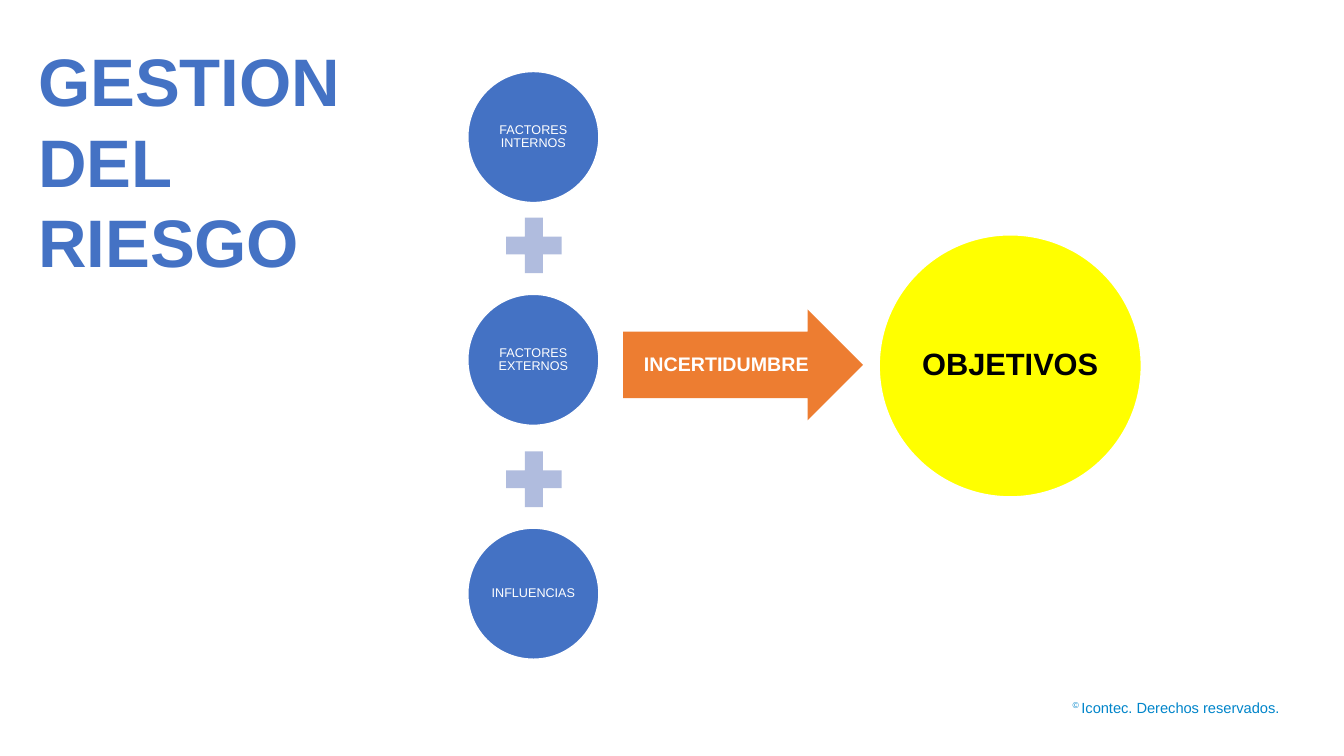
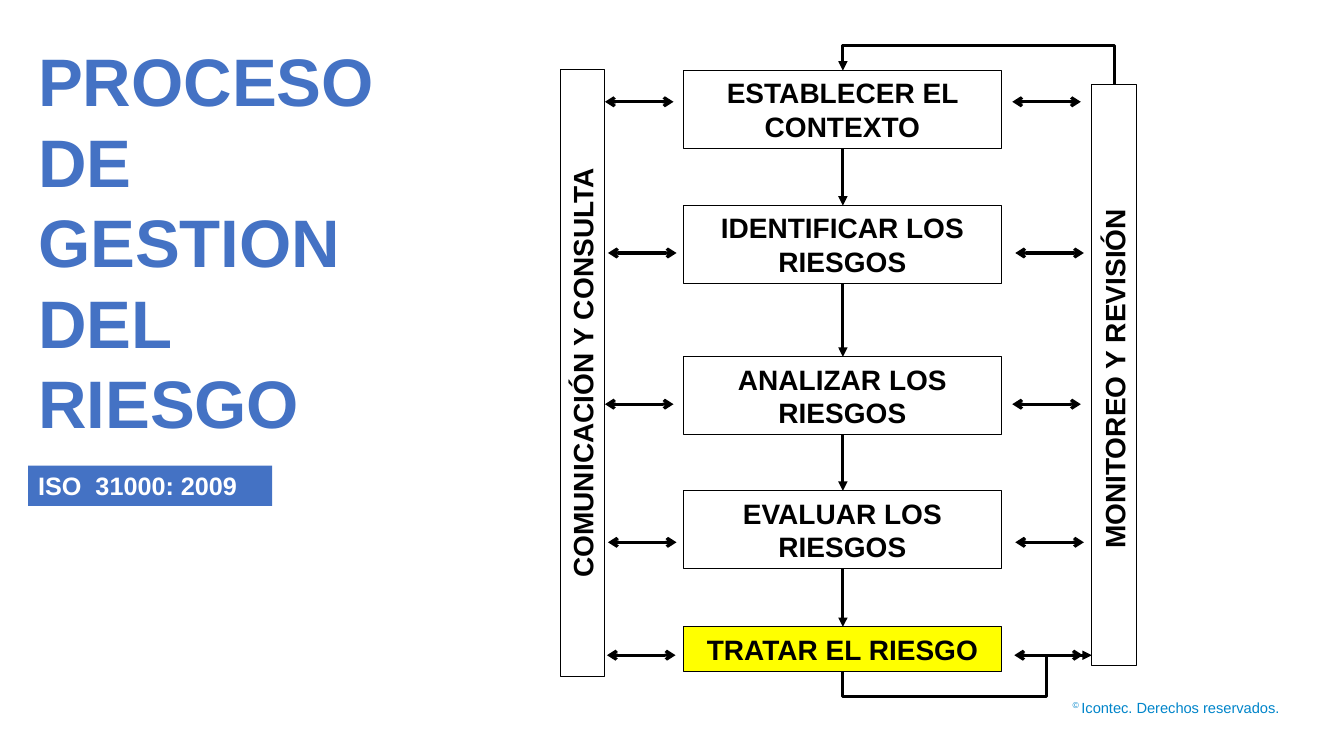
from lxml.etree import SubElement
from pptx import Presentation
from pptx.dml.color import RGBColor
from pptx.enum.shapes import MSO_CONNECTOR, MSO_SHAPE
from pptx.enum.text import MSO_ANCHOR as Anchor, PP_ALIGN as Align
from pptx.oxml.ns import qn
from pptx.util import Pt

PX = 9144  # one px is a hundredth of an inch
FONT = "Arial"
BLUE = RGBColor(0x44, 0x72, 0xC4)
PALE_BLUE = RGBColor(0xB0, 0xBC, 0xDE)
FOOTER_BLUE = RGBColor(0x00, 0x85, 0xCA)
ORANGE = RGBColor(0xED, 0x7D, 0x31)
YELLOW = RGBColor(0xFF, 0xFF, 0x00)
WHITE = RGBColor(0xFF, 0xFF, 0xFF)
BLACK = RGBColor(0x00, 0x00, 0x00)


def add_box(slide, kind, bounds, runs=(), size=20, color=BLACK, bold=True,
            align=Align.CENTER, anchor=Anchor.MIDDLE, margins=(10, 5),
            fill=None, line=None, line_width=0.75, spacing=None):
    """Add a preset shape, or a text box when kind is None, with its runs."""
    bounds = [value * PX for value in bounds]
    if kind is None:
        shape = slide.shapes.add_textbox(*bounds)
    else:
        shape = slide.shapes.add_shape(kind, *bounds)
        shape.shadow.inherit = False
        if fill is None:
            shape.fill.background()
        else:
            shape.fill.solid()
            shape.fill.fore_color.rgb = fill
        if line is None:
            shape.line.fill.background()
        else:
            shape.line.color.rgb = line
            shape.line.width = Pt(line_width)
    frame = shape.text_frame
    frame.word_wrap = True
    frame.vertical_anchor = anchor
    frame.margin_left = frame.margin_right = margins[0] * PX
    frame.margin_top = frame.margin_bottom = margins[1] * PX
    paragraph = frame.paragraphs[0]
    paragraph.alignment = align
    if spacing:
        paragraph.line_spacing = spacing
    for text in runs:
        run = paragraph.add_run()
        run.text = text
        run.font.name = FONT
        run.font.size = Pt(size)
        run.font.bold = bold
        run.font.color.rgb = color
    return shape


def style_arrow(shape, **ends):
    """Draw a thick black line; ends maps headEnd or tailEnd to a type."""
    shape.line.color.rgb = BLACK
    shape.line.width = Pt(2.25)
    properties = shape._element.spPr
    outline = properties.find(qn("a:ln"))
    for end, kind in ends.items():
        SubElement(outline, qn(f"a:{end}"), type=kind)
    SubElement(properties, qn("a:effectLst"))


presentation = Presentation()
presentation.slide_width = 1333 * PX
presentation.slide_height = 750 * PX
blank_layout = presentation.slide_layouts[6]

slides = []
for title, title_height in (("GESTION DEL RIESGO", 252),
                            ("PROCESO DE GESTION DEL RIESGO", 414)):
    slide = presentation.slides.add_slide(blank_layout)
    footer = add_box(slide, None, (1047, 688, 232, 29),
                     ("© ", "Icontec. Derechos reservados."), 10.5, FOOTER_BLUE,
                     bold=False, align=Align.RIGHT, anchor=Anchor.TOP)
    copyright_sign = footer.text_frame.paragraphs[0].runs[0]
    copyright_sign.font._element.set("baseline", "30000")
    add_box(slide, None, (28, 34, 420, title_height), (title,), 48, BLUE,
            align=Align.LEFT, anchor=Anchor.TOP)
    slides.append(slide)
factors_slide, process_slide = slides

# Factors that add up to uncertainty about the objectives
for top, factor in ((71, "FACTORES INTERNOS"), (292, "FACTORES EXTERNOS"),
                    (524, "INFLUENCIAS")):
    add_box(factors_slide, MSO_SHAPE.OVAL, (464, top, 130, 130), (factor,), 9,
            WHITE, bold=False, margins=(1, 1), fill=BLUE, line=WHITE,
            line_width=1, spacing=0.9)
for top in (206, 438):
    add_box(factors_slide, MSO_SHAPE.MATH_PLUS, (492, top, 75, 75), fill=PALE_BLUE)
uncertainty = add_box(factors_slide, MSO_SHAPE.RIGHT_ARROW, (618, 307, 238, 110),
                      ("INCERTIDUMBRE",), 14, WHITE, margins=(0, 0), fill=ORANGE,
                      spacing=0.9)
uncertainty.adjustments[0] = 0.6
uncertainty.adjustments[1] = 0.5
add_box(factors_slide, MSO_SHAPE.OVAL, (872, 233, 260, 260), ("OBJETIVOS",), 22,
        margins=(3, 3), fill=YELLOW, line=WHITE, line_width=1, spacing=0.9)

# Risk management process
add_box(process_slide, MSO_SHAPE.RECTANGLE, (28, 462, 242, 40),
        ("ISO  31000: 2009",), 18, WHITE, align=Align.LEFT, anchor=Anchor.TOP,
        fill=BLUE)
for bounds, activity in (((276, 348, 603, 44), "COMUNICACIÓN Y CONSULTA"),
                         ((817, 350, 576, 44), "MONITOREO Y REVISIÓN ")):
    bar = add_box(process_slide, MSO_SHAPE.RECTANGLE, bounds, (activity,), line=BLACK)
    bar.rotation = 270

STEP_LEFT, STEP_WIDTH, STEP_CENTER = 678, 315, 836
steps = (
    (70, 77, "ESTABLECER EL CONTEXTO", None),
    (204, 77, "IDENTIFICAR LOS RIESGOS", None),
    (354, 77, "ANALIZAR LOS RIESGOS", None),
    (487, 77, "EVALUAR LOS RIESGOS", None),
    (622, 44, "TRATAR EL RIESGO", YELLOW),
)
for top, height, step, fill in steps:
    add_box(process_slide, MSO_SHAPE.RECTANGLE, (STEP_LEFT, top, STEP_WIDTH, height),
            (step,), fill=fill, line=BLACK)

arrows = [((STEP_CENTER, top + height, STEP_CENTER, following[0]),
           {"tailEnd": "triangle"})
          for (top, height, *_), following in zip(steps, steps[1:])]
for left, y in ((600, 101), (603, 251), (600, 401), (603, 538), (602, 650)):
    for start in (left, left + 404):
        arrows.append(((start, y, start + 68, y),
                       {"headEnd": "arrow", "tailEnd": "arrow"}))
for points, ends in arrows:
    arrow = process_slide.shapes.add_connector(
        MSO_CONNECTOR.STRAIGHT, *(value * PX for value in points))
    style_arrow(arrow, **ends)

feedback_routes = (
    ((1105, 84), (1105, 45), (STEP_CENTER, 45), (STEP_CENTER, 70)),
    ((STEP_CENTER, 666), (STEP_CENTER, 691), (1038, 691), (1038, 650), (1083, 650)),
)
for start, *corners in feedback_routes:
    builder = process_slide.shapes.build_freeform(*start, scale=PX)
    builder.add_line_segments(corners, close=False)
    route = builder.convert_to_shape()
    route.fill.background()
    style_arrow(route, tailEnd="triangle")

presentation.save("out.pptx")
